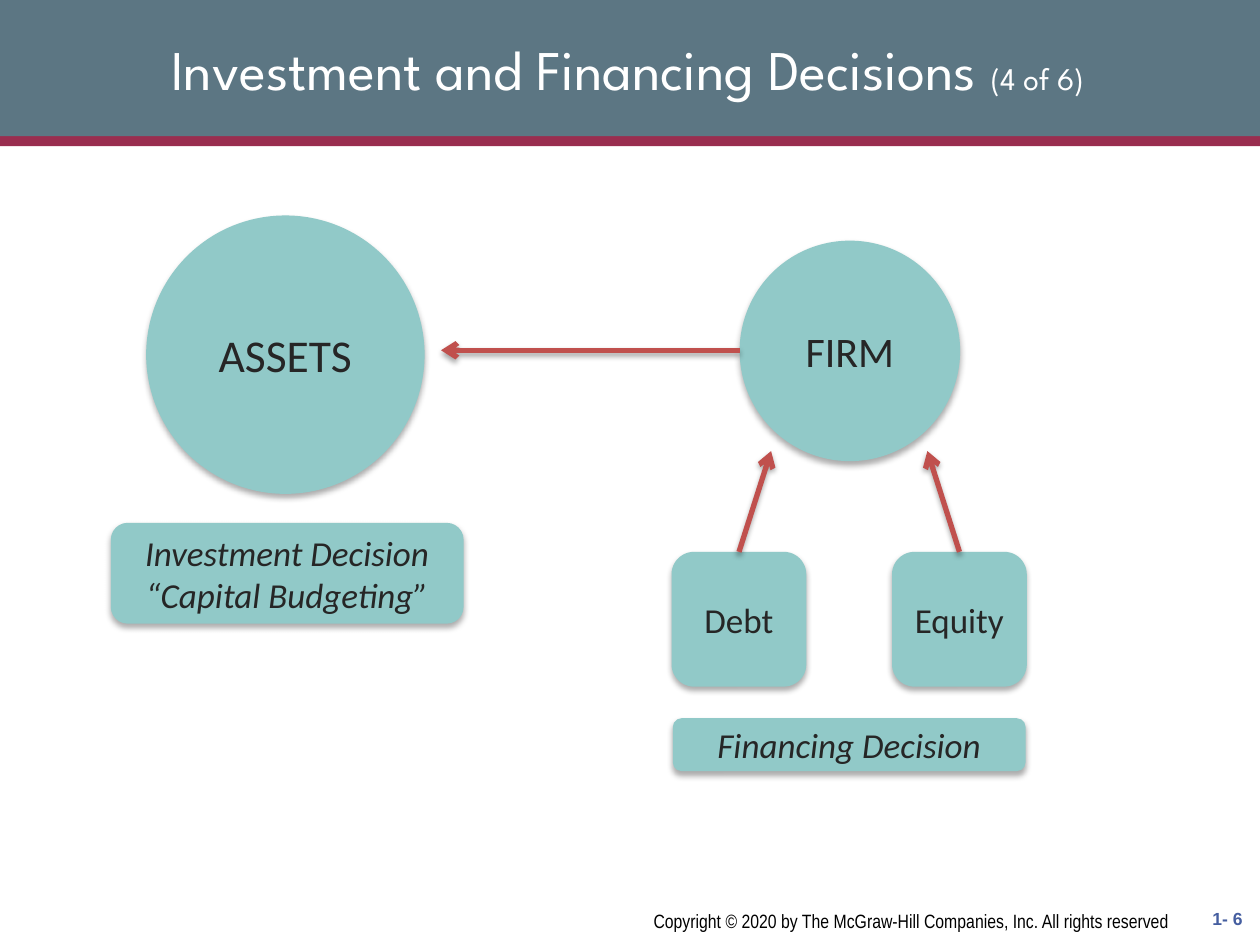
from dataclasses import dataclass

import pptx
import pptx.dml.color
import pptx.enum.shapes
import pptx.enum.text
import pptx.oxml
import pptx.oxml.ns
import pptx.util

Inches = pptx.util.Inches
Pt = pptx.util.Pt
RGB = pptx.dml.color.RGBColor.from_string
Kind = pptx.enum.shapes.MSO_SHAPE
Align = pptx.enum.text.PP_ALIGN
Middle = pptx.enum.text.MSO_ANCHOR.MIDDLE
NS = pptx.oxml.ns.nsdecls("a")


@dataclass(frozen=True)
class Theme:
    band: str = "5C7683"
    rule: str = "992D4F"
    node: str = "91C9C8"
    ink: str = "262626"
    arrow: str = "C0504D"
    white: str = "FFFFFF"
    black: str = "000000"
    page: str = "455EA0"
    title: int = 32
    count: int = 18
    assets: int = 26
    firm: int = 24
    label: int = 20
    small: int = 11
    number: int = 10


theme = Theme()


def style(para, size, color, face, align=Align.CENTER):
    para.alignment = align
    for run in para.runs:
        run.font.size = Pt(size)
        run.font.name = face
        run.font.color.rgb = RGB(color)


def shade(props, alpha, blur, dist):
    """Give shape properties a soft shadow that falls straight down."""
    props.append(pptx.oxml.parse_xml(
        f'<a:effectLst {NS}><a:outerShdw blurRad="{Pt(blur)}" dist="{Pt(dist)}" '
        f'dir="5400000" rotWithShape="0"><a:srgbClr val="{theme.black}">'
        f'<a:alpha val="{alpha * 1000}"/></a:srgbClr></a:outerShdw></a:effectLst>'))


deck = pptx.Presentation()
deck.slide_width, deck.slide_height = Inches(10), Inches(7.5)
slide = deck.slides.add_slide(deck.slide_layouts[5])
shapes = slide.shapes

# Header bands
for top, high, color in [(1.08, 0.08, theme.rule), (0, 1.08, theme.band)]:
    band = shapes.add_shape(Kind.RECTANGLE, 0, Inches(top), Inches(10), Inches(high))
    band.shadow.inherit = False
    band.fill.solid()
    band.fill.fore_color.rgb = RGB(color)
    band.line.fill.background()

# Title, brought in front of the bands
title = shapes.title
title.left, title.top = Inches(0.25), Inches(0.08)
title.width, title.height = Inches(9.46), Inches(0.92)
title.element.getparent().append(title.element)
title.text_frame.vertical_anchor = Middle
para = title.text_frame.paragraphs[0]
para.text = "Investment and Financing Decisions "
para.add_run().text = "(4 of 6)"
style(para, theme.title, theme.white, "League Spartan")
para.runs[1].font.size = Pt(theme.count)

# Footer
foot = [
    (3.58, 7.17, 5.8, 0.29, theme.small, theme.black, "Arial Narrow",
     "Copyright © 2020 by The McGraw-Hill Companies, Inc. All rights reserved"),
    (9.46, 7.08, 0.5, 0.42, theme.number, theme.page, "Arial", "1- 6"),
]
for left, top, wide, high, size, color, face, text in foot:
    box = shapes.add_textbox(Inches(left), Inches(top), Inches(wide), Inches(high))
    box.text_frame.word_wrap = True
    box.text_frame.text = text
    style(box.text_frame.paragraphs[0], size, color, face, Align.RIGHT)
box.text_frame.word_wrap = False
box.text_frame.vertical_anchor = Middle
box.text_frame.paragraphs[0].runs[0].font.bold = True

# Nodes and captions
oval, round_box = Kind.OVAL, Kind.ROUNDED_RECTANGLE
nodes = [
    (oval, 1.16, 1.71, 2.21, 2.21, theme.assets, False, "ASSETS"),
    (round_box, 0.88, 4.15, 2.8, 0.8, theme.label, True,
     "Investment Decision\n“Capital Budgeting”"),
    (oval, 5.87, 1.91, 1.75, 1.75, theme.firm, False, "FIRM"),
    (round_box, 5.34, 5.7, 2.8, 0.42, theme.label, True, "Financing Decision"),
    (round_box, 5.33, 4.38, 1.07, 1.07, theme.label, False, "Debt"),
    (round_box, 7.08, 4.38, 1.07, 1.07, theme.label, False, "Equity"),
]
made = {}
for kind, left, top, wide, high, size, slant, text in nodes:
    node = shapes.add_shape(kind, Inches(left), Inches(top), Inches(wide), Inches(high))
    node.fill.solid()
    node.fill.fore_color.rgb = RGB(theme.node)
    node.line.fill.background()
    shade(node.element.spPr, 32, 3.5, 2.2)
    frame = node.text_frame
    frame.vertical_anchor = Middle
    frame.text = text
    for para in frame.paragraphs:
        style(para, size, theme.ink, "Calibri")
        para.runs[0].font.italic = slant
    made[text] = node

# Arrows: sources feed the firm, the firm invests in assets
arrows = [
    ("Debt", 5.87, 4.38, 6.12, 3.58),
    ("Equity", 7.62, 4.38, 7.36, 3.58),
    (None, 5.87, 2.78, 3.5, 2.78),
]
for source, *ends in arrows:
    arrow = shapes.add_connector(
        pptx.enum.shapes.MSO_CONNECTOR.STRAIGHT, *[Inches(end) for end in ends])
    if source:
        arrow.begin_connect(made[source], 0)
    arrow.line.color.rgb = RGB(theme.arrow)
    arrow.line.width = Pt(3)
    props = arrow.element.spPr
    props.find(pptx.oxml.ns.qn("a:ln")).append(
        pptx.oxml.parse_xml(f'<a:tailEnd {NS} type="arrow"/>'))
    shade(props, 35, 3.1, 1.8)

deck.save("out.pptx")
